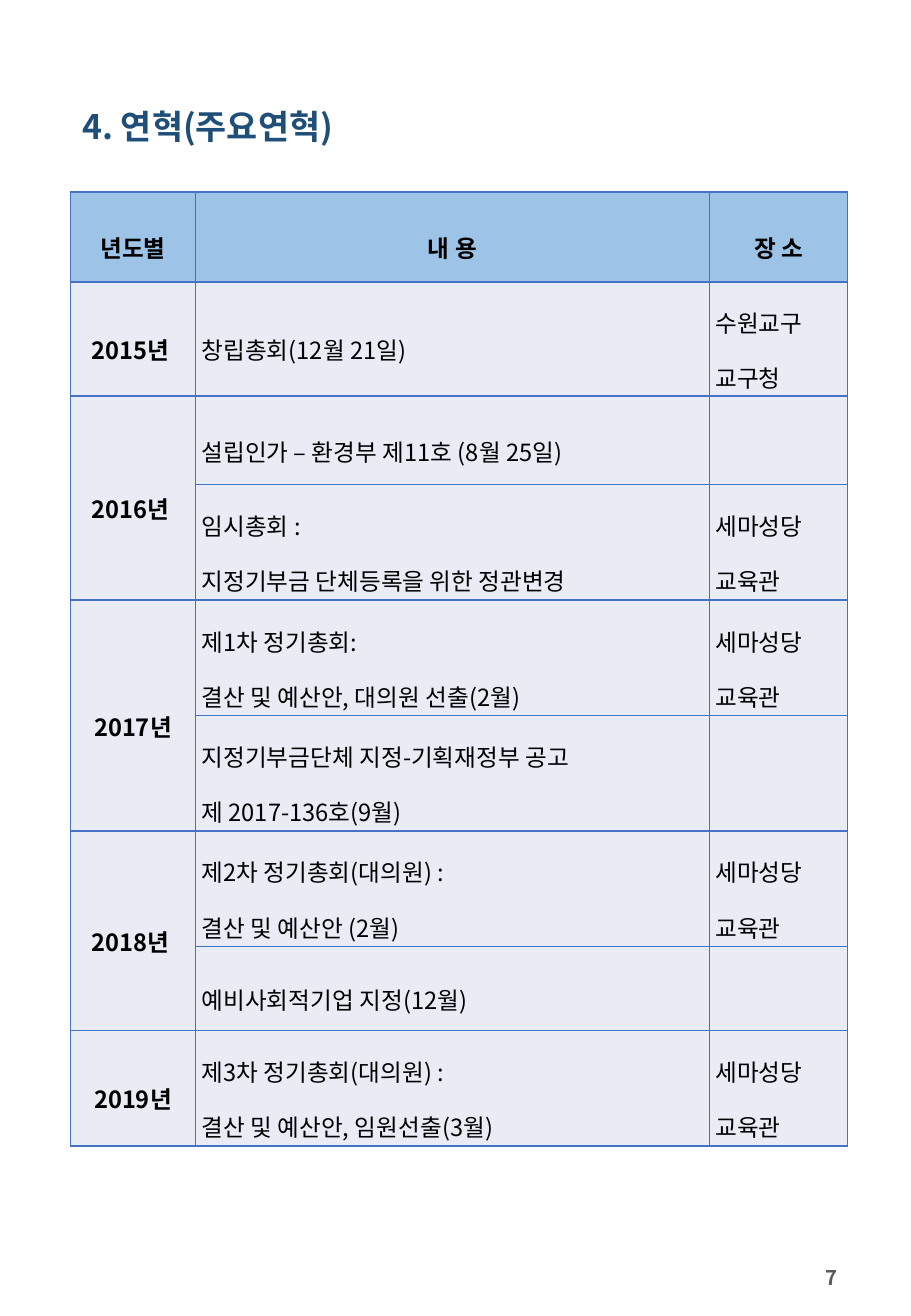
from dataclasses import dataclass
from typing import Any

from lxml.etree import SubElement
from pptx import Presentation
from pptx.dml.color import RGBColor
from pptx.enum.text import MSO_ANCHOR, PP_ALIGN
from pptx.oxml.ns import qn
from pptx.util import Inches, Pt

FONT = "Noto Sans CJK KR"
NAVY, BLACK, GRAY = "1F4E79", "000000", "595959"
HEADER_FILL, BODY_FILL, BORDER = "9DC3E6", "E9EBF5", "4472C4"
COL_WIDTHS = (1.03, 4.23, 1.14)
HEADER_HEIGHT = 0.74
HEADINGS = ("년도별", "내 용", "장 소")
CELL_FORMAT = {
    "vertical_anchor": MSO_ANCHOR.MIDDLE,
    "margin_left": Inches(0.05),
    "margin_right": Inches(0.05),
    "margin_top": Inches(0.01),
    "margin_bottom": Inches(0.01),
}


@dataclass(frozen=True)
class Event:
    """One table row; an empty year continues the year above."""
    year: str
    content: str
    place: str = ""
    height: float = 0.95


HALL = "세마성당 \n교육관"
EVENTS = (
    Event("2015년 ", "창립총회(12월 21일)", "수원교구\n교구청", 0.94),
    Event("2016년 ", "설립인가 – 환경부 제11호 (8월 25일)", height=0.73),
    Event("", "임시총회 : \n지정기부금 단체등록을 위한 정관변경", HALL),
    Event("2017년", "제1차 정기총회:\n결산 및 예산안, 대의원 선출(2월)", HALL),
    Event("", "지정기부금단체 지정-기획재정부 공고 \n제 2017-136호(9월)"),
    Event("2018년 ", "제2차 정기총회(대의원) :\n결산 및 예산안 (2월)", HALL),
    Event("", "예비사회적기업 지정(12월)", height=0.69),
    Event("2019년", "제3차 정기총회(대의원) :\n결산 및 예산안, 임원선출(3월)", HALL),
)


def rgb(value: str) -> RGBColor:
    return RGBColor.from_string(value)


def apply(target: Any, values: dict[str, Any]) -> None:
    for name, value in values.items():
        setattr(target, name, value)


def write(tf: Any, text: str, size: float, color: str, bold: bool,
          align: PP_ALIGN, spacing: float) -> None:
    """Fill a text frame with one paragraph for each line of text."""
    for i, line in enumerate(text.split("\n")):
        p = tf.add_paragraph() if i else tf.paragraphs[0]
        apply(p, {"alignment": align, "line_spacing": spacing})
        r = p.add_run()
        r.text = line
        apply(r.font, {"name": FONT, "size": Pt(size), "bold": bold})
        r.font.color.rgb = rgb(color)
        SubElement(r.font._element, qn("a:ea"), typeface=FONT)


def add_text(s: Any, box: tuple[float, float, float, float], text: str,
             size: float, color: str, align: PP_ALIGN,
             spacing: float = 1.0) -> None:
    tf = s.shapes.add_textbox(*map(Inches, box)).text_frame
    apply(tf, {"word_wrap": True, "vertical_anchor": MSO_ANCHOR.MIDDLE})
    write(tf, text, size, color, True, align, spacing)


def add_borders(cell: Any) -> None:
    """Put the four border lines ahead of the cell's fill."""
    tc_pr = cell._tc.get_or_add_tcPr()
    for i, side in enumerate(("lnL", "lnR", "lnT", "lnB")):
        ln = SubElement(tc_pr, qn(f"a:{side}"), w=str(Pt(1)))
        SubElement(SubElement(ln, qn("a:solidFill")), qn("a:srgbClr"), val=BORDER)
        tc_pr.insert(i, ln)


def fill_cell(cell: Any, text: str, fill: str, bold: bool) -> None:
    apply(cell, CELL_FORMAT)
    cell.fill.solid()
    cell.fill.fore_color.rgb = rgb(fill)
    add_borders(cell)
    if text:
        align = PP_ALIGN.CENTER if bold else PP_ALIGN.JUSTIFY
        write(cell.text_frame, text, 14, BLACK, bold, align, 1.6)


def add_history_table(s: Any) -> None:
    heights = (HEADER_HEIGHT, *(event.height for event in EVENTS))
    table = s.shapes.add_table(
        len(heights), len(COL_WIDTHS), Inches(0.58), Inches(1.58),
        Inches(sum(COL_WIDTHS)), Inches(sum(heights))).table
    apply(table, {"first_row": False, "horz_banding": False})
    for column, width in zip(table.columns, COL_WIDTHS):
        column.width = Inches(width)
    for row, height in zip(table.rows, heights):
        row.height = Inches(height)

    for col, heading in enumerate(HEADINGS):
        fill_cell(table.cell(0, col), heading, HEADER_FILL, True)
    for row, event in enumerate(EVENTS, start=1):
        for col, text in enumerate((event.year, event.content, event.place)):
            fill_cell(table.cell(row, col), text, BODY_FILL, col == 0)
        if not event.year:
            table.cell(row - 1, 0).merge(table.cell(row, 0))


def main() -> None:
    prs = Presentation()
    apply(prs, {"slide_width": Inches(7.5), "slide_height": Inches(10.83)})
    s = prs.slides.add_slide(prs.slide_layouts[6])
    add_text(s, (0.58, 0.8, 6.47, 0.51), "4. 연혁(주요연혁)", 20, NAVY,
             PP_ALIGN.LEFT, 0.9)
    add_history_table(s)
    add_text(s, (6.43, 10.36, 0.56, 0.3), "7", 12, GRAY, PP_ALIGN.RIGHT)
    prs.save("out.pptx")


if __name__ == "__main__":
    main()
